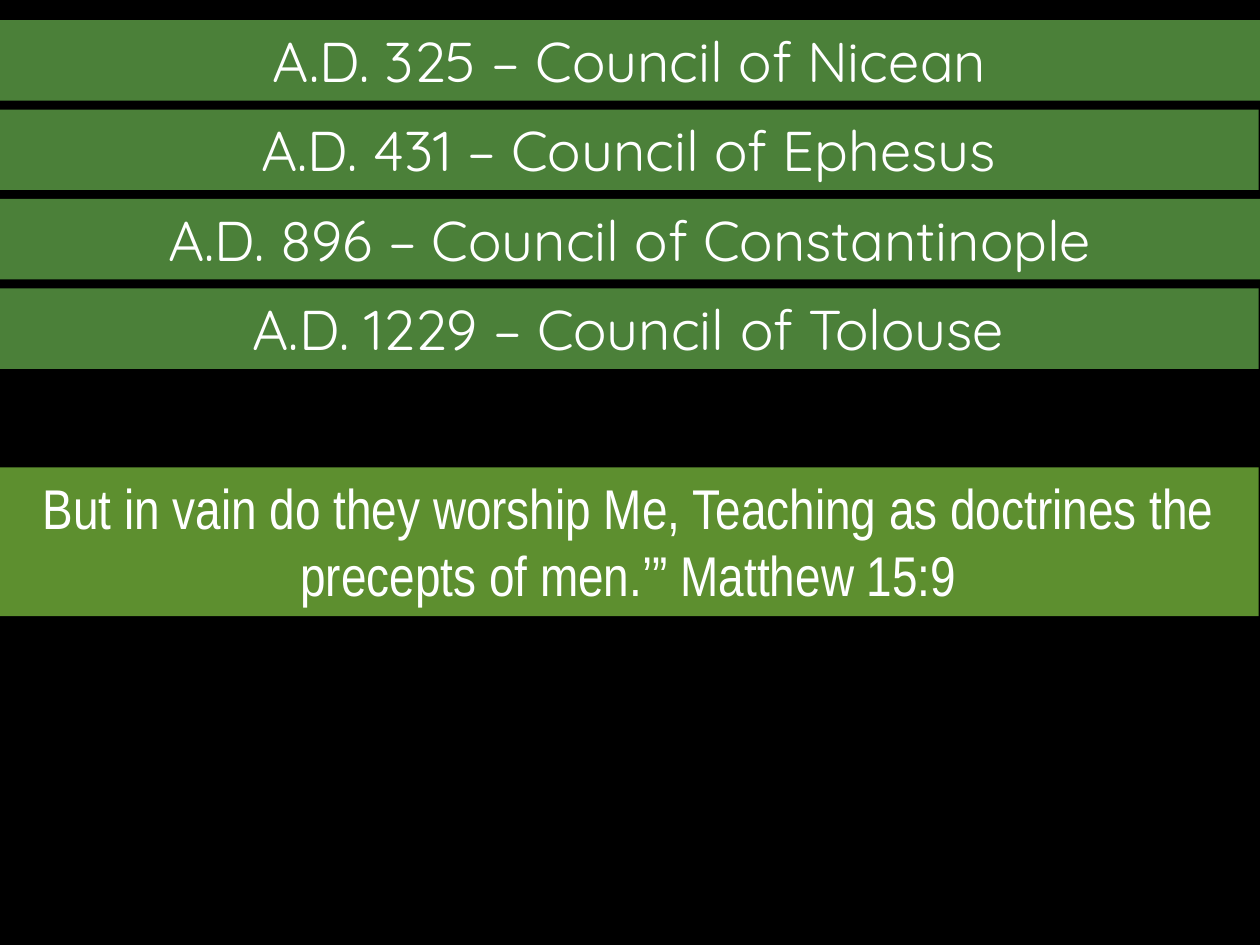
import pptx
import pptx.dml.color
import pptx.enum.text
import pptx.util

Pt = pptx.util.Pt
COLORS = {
    "background": "000000",
    "council": "4B8039",
    "verse": "5D8F2F",
    "text": "FFFFFF",
}
BAND_WIDTH = 720
COUNCIL_HEIGHT = 46
COUNCIL_PITCH = 51.1
NUDGE = -0.72

COUNCILS = [
    "A.D. 325 – Council of Nicean",
    "A.D. 431 – Council of Ephesus",
    "A.D. 896 – Council of Constantinople",
    "A.D. 1229 – Council of Tolouse",
]
VERSE = (
    "But in vain do they worship Me, Teaching as doctrines the "
    "precepts of men.’” Matthew 15:9"
)


def rgb(role):
    return pptx.dml.color.RGBColor.from_string(COLORS[role])


def paint(fill, role):
    fill.solid()
    fill.fore_color.rgb = rgb(role)


def add_band(slide, left, top, height, wording, role, typeface):
    """Add a full-width coloured band with one centred paragraph."""
    band = slide.shapes.add_textbox(Pt(left), Pt(top), Pt(BAND_WIDTH), Pt(height))
    paint(band.fill, role)
    frame = band.text_frame
    frame.word_wrap = True
    frame.auto_size = pptx.enum.text.MSO_AUTO_SIZE.SHAPE_TO_FIT_TEXT
    line = frame.paragraphs[0]
    line.alignment = pptx.enum.text.PP_ALIGN.CENTER
    words = line.add_run()
    words.text = wording
    for attribute, value in {"name": typeface, "size": Pt(32)}.items():
        setattr(words.font, attribute, value)
    words.font.color.rgb = rgb("text")


def add_councils(slide, left, top):
    """Stack the councils at an even pitch, every second one nudged left."""
    for index, council in enumerate(COUNCILS):
        add_band(slide, left + index % 2 * NUDGE, top + index * COUNCIL_PITCH,
                 COUNCIL_HEIGHT, council, "council", "Quicksand")


def main():
    deck = pptx.Presentation()
    deck.slide_width, deck.slide_height = Pt(720), Pt(540)
    slide = deck.slides.add_slide(deck.slide_layouts[6])
    paint(slide.background.fill, "background")
    add_councils(slide, 0, 11.5)
    add_band(slide, NUDGE, 267.1, 85, VERSE, "verse", "Arial Narrow")
    deck.save("out.pptx")


if __name__ == "__main__":
    main()
